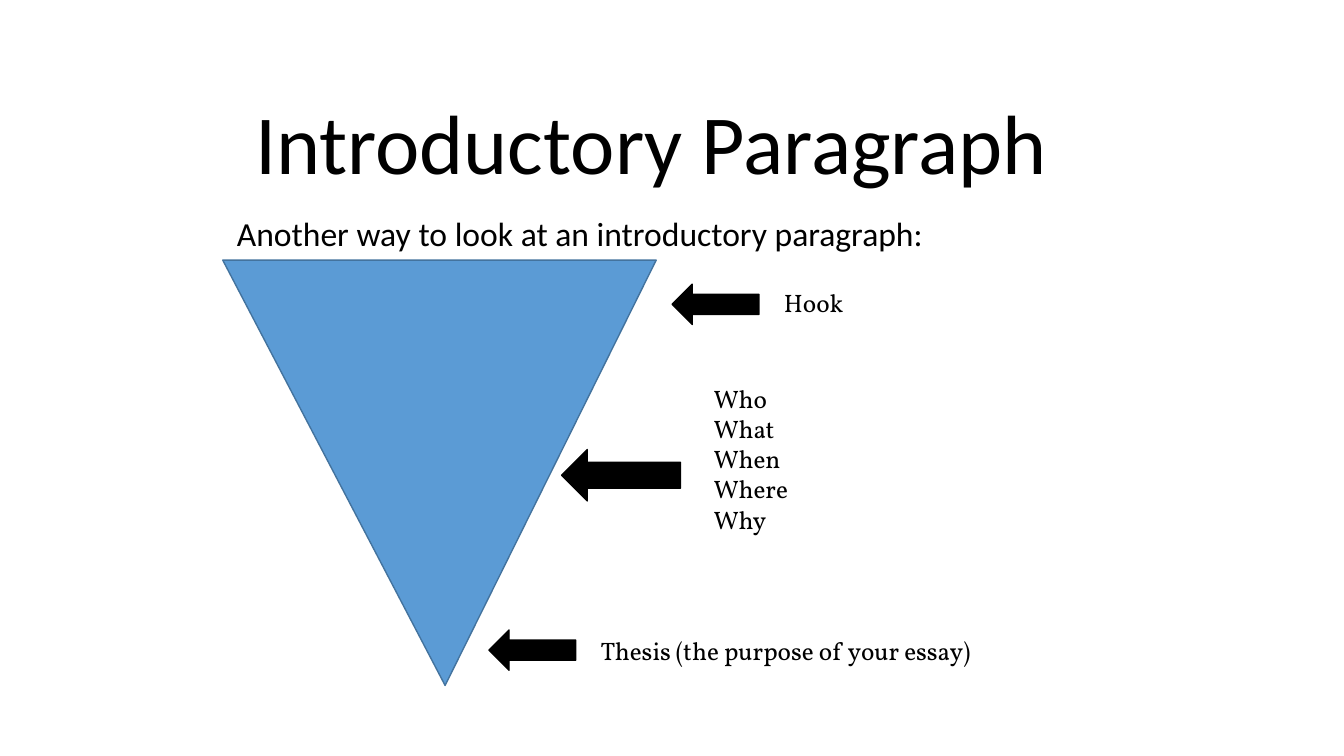
import pptx
import pptx.dml.color
import pptx.enum.shapes
import pptx.enum.text
import pptx.util
from lxml import etree
import pptx.oxml.ns

Pt = pptx.util.Pt
RGBColor = pptx.dml.color.RGBColor
SHAPES = pptx.enum.shapes.MSO_SHAPE
ALIGN = pptx.enum.text.PP_ALIGN
ANCHOR = pptx.enum.text.MSO_ANCHOR
AUTO_SIZE = pptx.enum.text.MSO_AUTO_SIZE

BLACK = RGBColor(0x00, 0x00, 0x00)
BLUE = RGBColor(0x5B, 0x9B, 0xD5)
DARK_BLUE = RGBColor(0x43, 0x73, 0x9E)

CALLOUTS = [
    (["Hook"], (321, 17.2, 62, 28.8), (393.8, 15.8, 118, 28.8)),
    (["Who", "What", "When", "Where", "Why"],
     (242, 135.3, 85, 36.7), (343.5, 84.2, 196.6, 116.6)),
    (["Thesis (the purpose of your essay)"],
     (190.1, 264.2, 62, 28.8), (262.8, 264.2, 304, 28.8)),
]


def place(shape, box):
    shape.left, shape.top, shape.width, shape.height = [Pt(length) for length in box]


def format_text(text_frame, font_name, size):
    text_frame.word_wrap = True
    for paragraph in text_frame.paragraphs:
        for run in paragraph.runs:
            run.font.name = font_name
            run.font.size = Pt(size)
            run.font.color.rgb = BLACK


def fill_placeholder(placeholder, box, text, size, alignment, anchor):
    place(placeholder, box)
    text_frame = placeholder.text_frame
    text_frame.text = text
    text_frame.auto_size = AUTO_SIZE.NONE
    text_frame.vertical_anchor = anchor
    paragraph = text_frame.paragraphs[0]
    paragraph.alignment = alignment
    paragraph.line_spacing = 0.9
    paragraph.space_before = Pt(0)
    format_text(text_frame, "Calibri", size)
    return paragraph


def remove_bullet(paragraph):
    properties = paragraph._p.get_or_add_pPr()
    properties.set("marL", "0")
    properties.set("indent", "0")
    etree.SubElement(properties, pptx.oxml.ns.qn("a:buNone"))


def add_filled_shape(slide, kind, box, fill, line):
    shape = slide.shapes.add_shape(kind, *[Pt(length) for length in box])
    shape.shadow.inherit = False
    shape.fill.solid()
    shape.fill.fore_color.rgb = fill
    shape.line.color.rgb = line
    shape.line.width = Pt(1)
    return shape


def add_callout(slide, origin, lines, arrow_box, label_box):
    left, top = origin

    def shifted(box):
        return (left + box[0], top + box[1], box[2], box[3])

    add_filled_shape(slide, SHAPES.LEFT_ARROW, shifted(arrow_box), BLACK, BLACK)
    label = slide.shapes.add_textbox(*[Pt(length) for length in shifted(label_box)])
    label.text_frame.text = "\n".join(lines)
    format_text(label.text_frame, "Vollkorn", 18)


def add_funnel(slide, box):
    triangle = add_filled_shape(slide, SHAPES.ISOSCELES_TRIANGLE, box, BLUE, DARK_BLUE)
    triangle.adjustments[0] = 0.487
    triangle.rotation = 180
    for lines, arrow_box, label_box in CALLOUTS:
        add_callout(slide, box[:2], lines, arrow_box, label_box)


def main():
    presentation = pptx.Presentation()
    presentation.slide_width = Pt(960)
    presentation.slide_height = Pt(540)
    slide = presentation.slides.add_slide(presentation.slide_layouts[1])
    fill_placeholder(slide.shapes.title, (159.1, 33.8, 612, 107.3),
                     "Introductory Paragraph", 60, ALIGN.CENTER, ANCHOR.BOTTOM)
    introduction = fill_placeholder(
        slide.placeholders[1], (162, 152, 612, 348.5),
        "Another way to look at an introductory paragraph:", 24, ALIGN.LEFT, ANCHOR.TOP)
    remove_bullet(introduction)
    add_funnel(slide, (159.1, 185.8, 309.6, 303.8))
    presentation.save("out.pptx")


if __name__ == "__main__":
    main()
